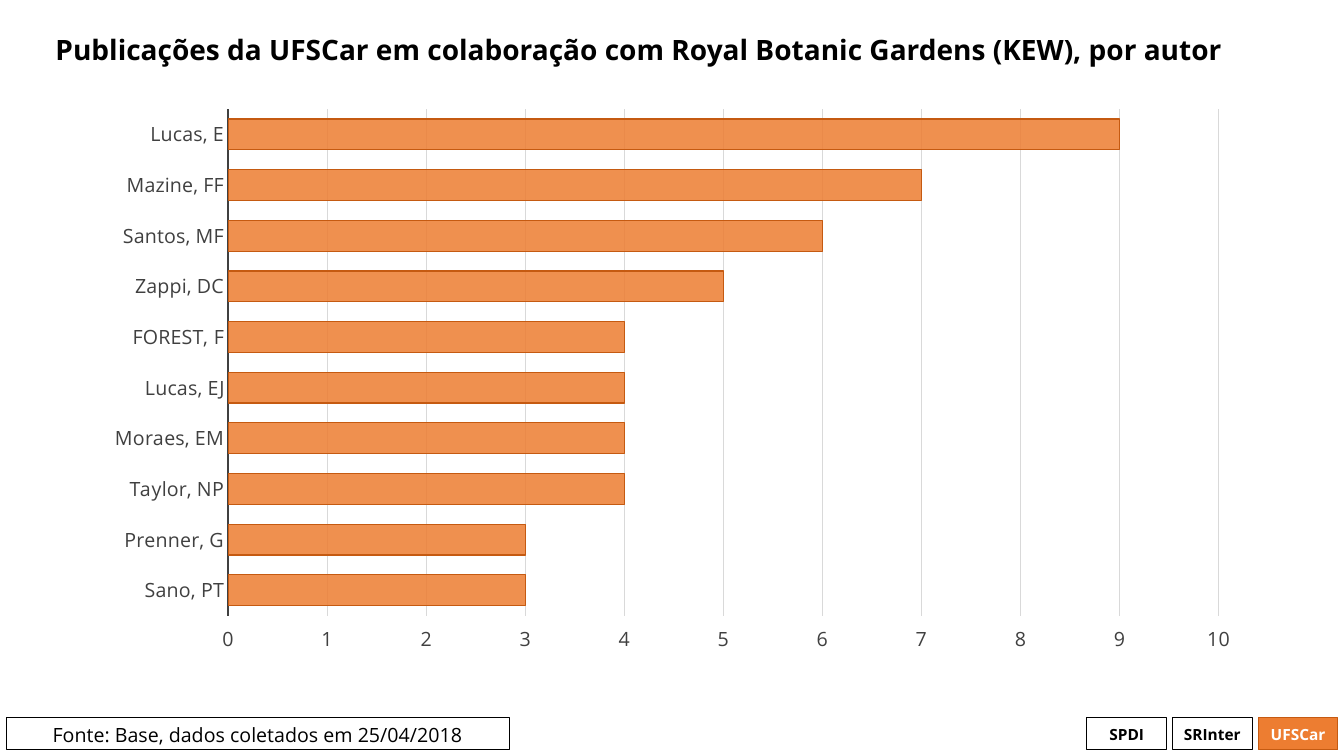
from dataclasses import dataclass

from lxml import etree
from pptx import Presentation
from pptx.chart.data import CategoryChartData
from pptx.dml.color import RGBColor as RGB
from pptx.enum.chart import XL_CHART_TYPE as CHART, XL_TICK_LABEL_POSITION as LABELS, XL_TICK_MARK as TICK
from pptx.enum.shapes import MSO_SHAPE as SHAPE
from pptx.enum.text import MSO_ANCHOR as ANCHOR, MSO_AUTO_SIZE as AUTOSIZE, PP_ALIGN as ALIGN
from pptx.oxml.ns import qn
from pptx.util import Inches, Pt


@dataclass(frozen=True)
class Theme:
    font: str = "Open Sans"
    black: RGB = RGB(0x00, 0x00, 0x00)
    white: RGB = RGB(0xFF, 0xFF, 0xFF)
    axis: RGB = RGB(0x40, 0x40, 0x40)
    grid: RGB = RGB(0xD9, 0xD9, 0xD9)
    accent: RGB = RGB(0xED, 0x7D, 0x31)
    accent_dark: RGB = RGB(0xC5, 0x5A, 0x11)
    title_size: int = 20
    body_size: int = 14
    tag_size: int = 11
    thin: float = 0.75
    thick: float = 1.5


T = Theme()
AUTHORS = {
    "Lucas, E": 9, "Mazine, FF": 7, "Santos, MF": 6, "Zappi, DC": 5, "FOREST, F": 4,
    "Lucas, EJ": 4, "Moraes, EM": 4, "Taylor, NP": 4, "Prenner, G": 3, "Sano, PT": 3,
}


def set_attrs(obj, **values):
    for name, value in values.items():
        setattr(obj, name, value)


def set_font(font, size, color, bold=False):
    set_attrs(font, name=T.font, size=Pt(size), bold=bold)
    font.color.rgb = color


def set_line(line, color, width=T.thin):
    line.color.rgb = color
    line.width = Pt(width)


def place(shape, box):
    names = ("left", "top", "width", "height")
    set_attrs(shape, **{name: Inches(v) for name, v in zip(names, box)})


def write(tf, text, size, color, bold=False, align=ALIGN.CENTER):
    p = tf.paragraphs[0]
    p.alignment = align
    r = p.add_run()
    r.text = text
    set_font(r.font, size, color, bold)
    return p


def add_title(s, box, text):
    title = s.shapes.title
    place(title, box)
    tf = title.text_frame
    set_attrs(tf, word_wrap=True, auto_size=AUTOSIZE.NONE, vertical_anchor=ANCHOR.MIDDLE)
    write(tf, text, T.title_size, T.black, True, ALIGN.LEFT).line_spacing = 0.9


def add_author_chart(s, box):
    data = CategoryChartData()
    data.categories = AUTHORS
    data.add_series("Publicações", AUTHORS.values())
    chart = s.shapes.add_chart(CHART.BAR_CLUSTERED, *map(Inches, box), data).chart
    set_attrs(chart, has_legend=False, has_title=False)
    set_font(chart.font, T.body_size, T.black)

    cat, val = chart.category_axis, chart.value_axis
    for axis in (cat, val):
        set_attrs(axis, major_tick_mark=TICK.NONE, minor_tick_mark=TICK.NONE)
        set_font(axis.tick_labels.font, T.body_size, T.axis)
    cat.reverse_order = True
    set_line(cat.format.line, T.axis, T.thick)
    set_attrs(val, minimum_scale=0, maximum_scale=10, major_unit=1,
              tick_label_position=LABELS.HIGH)
    val.format.line.fill.background()
    set_line(val.major_gridlines.format.line, T.grid)

    plot = chart.plots[0]
    set_attrs(plot, gap_width=65, vary_by_categories=False)
    bars = plot.series[0].format
    bars.fill.solid()
    bars.fill.fore_color.rgb = T.accent
    set_line(bars.line, T.accent_dark)
    fill_color = plot.series[0]._element.find(qn("c:spPr")).find(qn("a:solidFill"))[0]
    etree.SubElement(fill_color, qn("a:alpha"), val="85000")


def add_label(s, box, text, size, bold=False, active=False, anchor=ANCHOR.MIDDLE):
    sp = s.shapes.add_shape(SHAPE.RECTANGLE, *map(Inches, box))
    sp.shadow.inherit = False
    if active:
        sp.fill.solid()
        sp.fill.fore_color.rgb = T.accent
    else:
        sp.fill.background()
    set_line(sp.line, T.accent_dark if active else T.black)
    tf = sp.text_frame
    set_attrs(tf, word_wrap=True, vertical_anchor=anchor,
              margin_left=Inches(0.05), margin_right=Inches(0.05))
    write(tf, text, size, T.white if active else T.black, bold)


def add_footer(s, box):
    """Source note at the left edge, tags lined up against the right edge."""
    left, top, width, height = box
    add_label(s, (left, top, 4.99, height), "Fonte: Base, dados coletados em 25/04/2018",
              T.body_size, anchor=ANCHOR.TOP)
    tags = ("SPDI", "SRInter", "UFSCar")
    tag_width, step = 0.79, 0.85
    first = left + width - tag_width - step * (len(tags) - 1)
    for i, tag in enumerate(tags):
        add_label(s, (first + i * step, top, tag_width, height), tag, T.tag_size,
                  bold=True, active=tag == "UFSCar")


def main():
    prs = Presentation()
    set_attrs(prs, slide_width=Inches(13.33), slide_height=Inches(7.5))
    s = prs.slides.add_slide(prs.slide_layouts[5])
    add_footer(s, (0.06, 7.12, 13.21, 0.32))
    add_title(s, (0.45, 0.06, 12.41, 0.91),
              "Publicações da UFSCar em colaboração com Royal Botanic Gardens (KEW), por autor")
    add_author_chart(s, (0.91, 0.97, 11.52, 5.62))
    prs.save("out.pptx")


if __name__ == "__main__":
    main()
